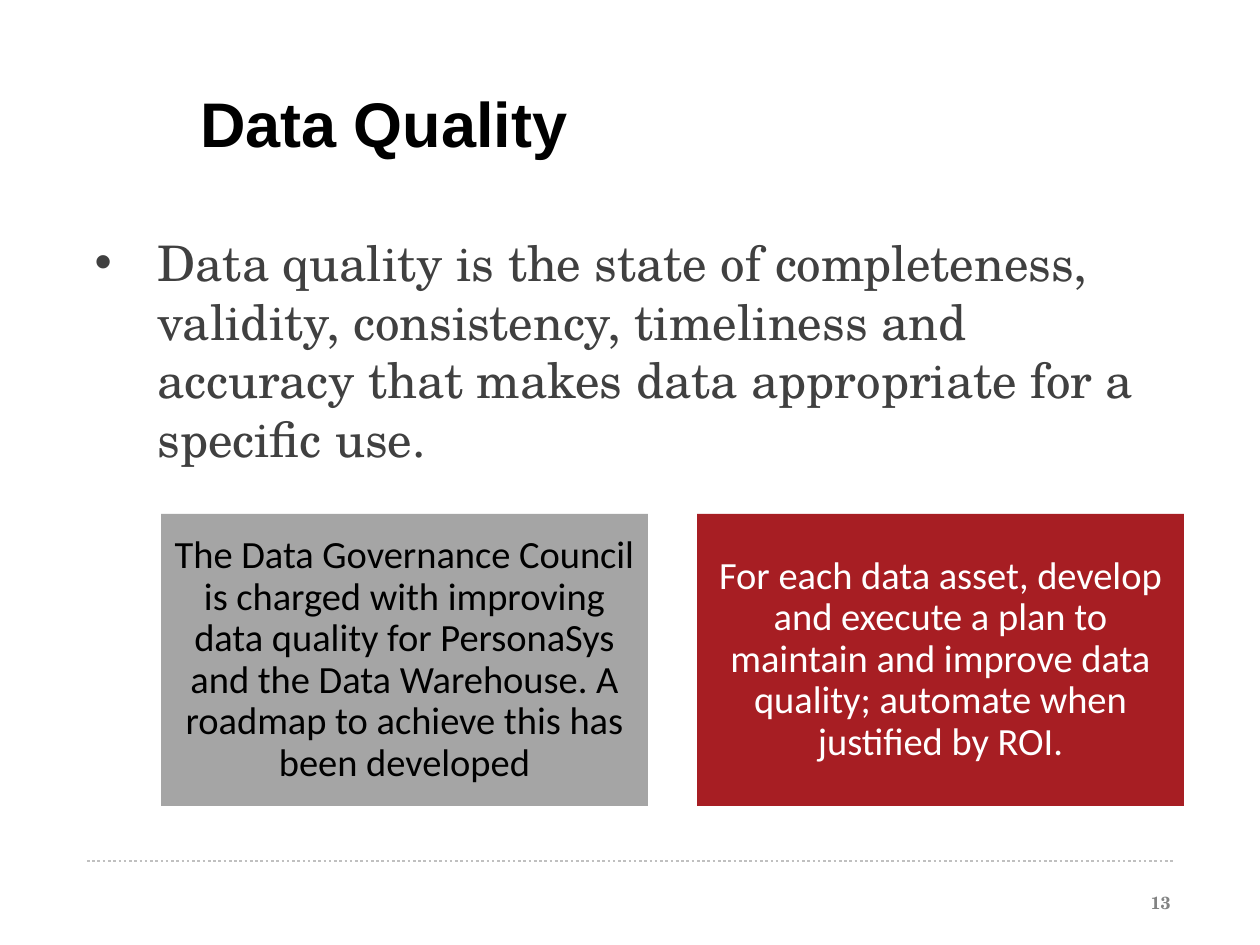
from lxml import etree
from pptx import Presentation, util as u
from pptx.dml.color import RGBColor
from pptx.enum import dml, shapes, text
from pptx.oxml.ns import qn

SCALE = u.Inches(1) / 126
ALIGN = text.PP_ALIGN
ANCHOR = text.MSO_ANCHOR


def px(n):
    return u.Emu(round(n * SCALE))


def color(code):
    return RGBColor.from_string(code)


class Deck:
    serif = "TeX Gyre Schola"
    sans = "Calibri"
    head = "Arial"

    def __init__(self):
        self.prs = Presentation()
        self.prs.slide_width, self.prs.slide_height = px(1260), px(945)
        self.slide = self.prs.slides.add_slide(self.prs.slide_layouts[1])

    def place(self, shape, x, y, w, h):
        shape.left, shape.top, shape.width, shape.height = map(px, (x, y, w, h))

    def label(self, shape, words, font, size, ink, bold=False,
              align=ALIGN.LEFT, anchor=ANCHOR.TOP, space=1.0):
        frame = shape.text_frame
        frame.text = words
        frame.word_wrap = True
        frame.auto_size = text.MSO_AUTO_SIZE.NONE
        frame.vertical_anchor = anchor
        para = frame.paragraphs[0]
        para.alignment, para.line_spacing = align, space
        para.space_before = u.Pt(0)
        style = para.runs[0].font
        style.name, style.size, style.bold = font, u.Pt(size), bold
        style.color.rgb = color(ink)
        return para

    def title(self, words, x, y, w, h):
        box = self.slide.shapes.title
        self.place(box, x, y, w, h)
        self.label(box, words, self.head, 36, "000000", True, space=0.8)
        box.text_frame.margin_left = px(118)

    def body(self, words, x, y, w, h):
        box = self.slide.placeholders[1]
        self.place(box, x, y, w, h)
        para = self.label(box, words, self.serif, 28, "404040")
        # Hanging bullet
        props = para._p.get_or_add_pPr()
        props.set("marL", str(px(63)))
        props.set("indent", str(px(-63)))
        etree.SubElement(props, qn("a:buFont")).set("typeface", self.head)
        etree.SubElement(props, qn("a:buChar")).set("char", "•")

    def card(self, words, x, y, w, h, fill, ink):
        box = self.slide.shapes.add_shape(
            shapes.MSO_SHAPE.RECTANGLE, *map(px, (x, y, w, h)))
        box.shadow.inherit = False
        box.fill.solid()
        box.fill.fore_color.rgb = color(fill)
        box.line.fill.background()
        self.label(box, words, self.sans, 22, ink, align=ALIGN.CENTER,
                   anchor=ANCHOR.MIDDLE, space=0.9)
        frame = box.text_frame
        frame.margin_left = frame.margin_right = px(11)
        frame.margin_top = frame.margin_bottom = px(11)

    def rule(self, x, y, end):
        line = self.slide.shapes.add_connector(
            shapes.MSO_CONNECTOR.STRAIGHT, px(x), px(y), px(end), px(y))
        line.line.color.rgb = color("C0C0C0")
        line.line.width = u.Pt(1.5)
        line.line.dash_style = dml.MSO_LINE.ROUND_DOT
        etree.SubElement(line._element.spPr, qn("a:effectLst"))

    def number(self, words, x, y, w, h):
        box = self.slide.shapes.add_textbox(*map(px, (x, y, w, h)))
        self.label(box, words, self.serif, 10, "828383", True, ALIGN.RIGHT)


def main():
    deck = Deck()

    # Footer rule
    deck.rule(87, 861, 1174)

    # Title and definition
    deck.title("Data Quality", 82, 93, 1101, 113)
    deck.body("Data quality is the state of completeness, validity, "
              "consistency, timeliness and accuracy that makes data "
              "appropriate for a specific use.", 82, 226, 1101, 570)

    # Page number
    deck.number("13", 900, 886, 283, 50)

    # Action cards
    wide, gap = 487, 49
    cards = [
        ("The Data Governance Council is charged with improving data quality "
         "for PersonaSys and the Data Warehouse. A roadmap to achieve this "
         "has been developed", "A5A5A5", "000000"),
        ("For each data asset, develop and execute a plan to maintain and "
         "improve data quality; automate when justified by ROI.",
         "A71E23", "FFFFFF"),
    ]
    for i, (words, fill, ink) in enumerate(cards):
        deck.card(words, 161 + i * (wide + gap), 514, wide, 292, fill, ink)

    deck.prs.save("out.pptx")


if __name__ == "__main__":
    main()
